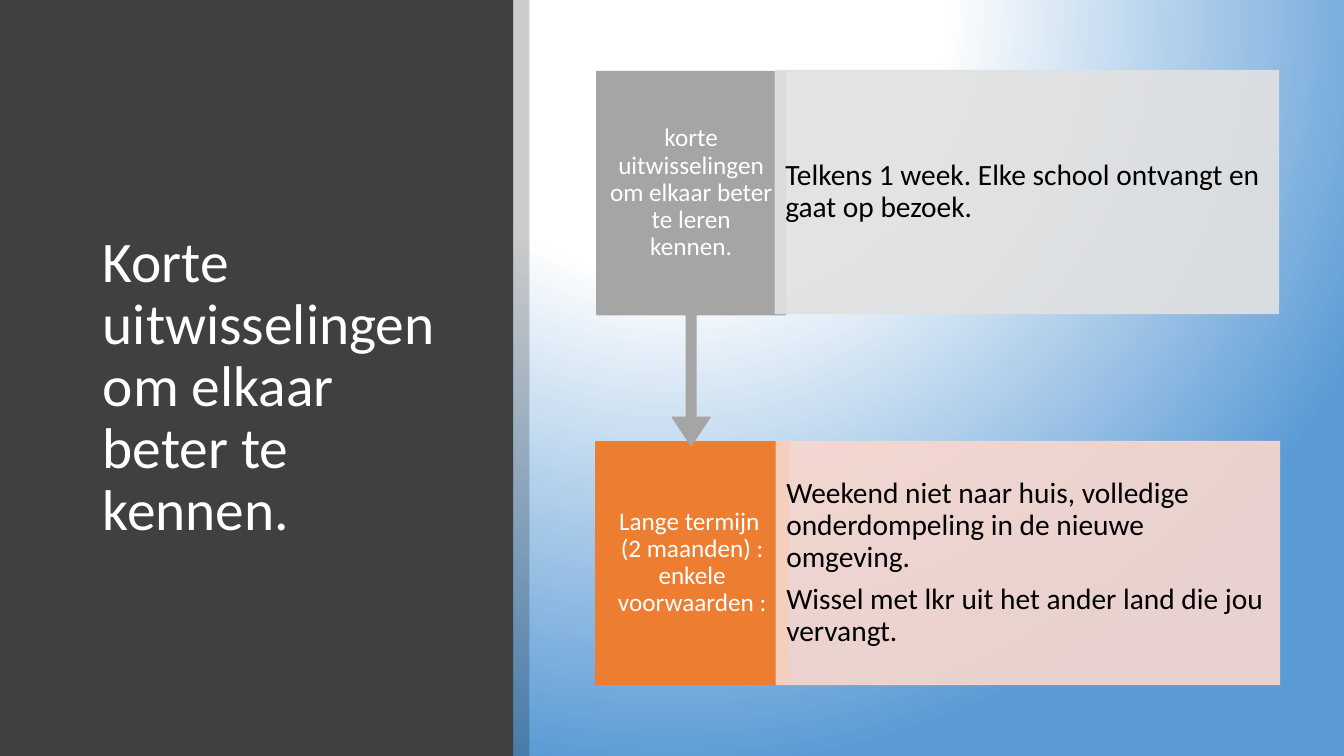
"""Build the slide about short exchanges with two linked explanation rows."""
from lxml.etree import SubElement
from pptx import Presentation
from pptx.dml.color import RGBColor
from pptx.enum.shapes import MSO_SHAPE
from pptx.enum.text import MSO_ANCHOR, MSO_AUTO_SIZE, PP_ALIGN
from pptx.oxml import parse_xml
from pptx.oxml.ns import nsdecls, qn
from pptx.util import Inches, Pt

WHITE = RGBColor(0xFF, 0xFF, 0xFF)
BLACK = RGBColor(0, 0, 0)
BLUE = RGBColor(0x5B, 0x9B, 0xD5)
DARK = RGBColor(0x40, 0x40, 0x40)
ORANGE = RGBColor(0xED, 0x7D, 0x31)
PINK = RGBColor(0xF8, 0xD7, 0xCE)
GREY = RGBColor(0xA5, 0xA5, 0xA5)
LIGHT = RGBColor(0xE1, 0xE1, 0xE1)


def add_box(shapes, kind, box, color, alpha=100, outline=True):
    sp = shapes.add_shape(kind, *[Inches(v) for v in box])
    sp.shadow.inherit = False
    fills = [sp.fill]
    if outline:
        sp.line.width = Pt(1)
        fills.append(sp.line.fill)
    else:
        sp.line.fill.background()
    for fill in fills:
        fill.solid()
        fill.fore_color.rgb = color
    if alpha < 100:
        for clr in list(sp.element.spPr.iter(qn("a:srgbClr"))):
            SubElement(clr, qn("a:alpha"), val=str(alpha * 1000))
    return sp


def set_text(sp, paragraphs, size, color, align, insets, after):
    tf = sp.text_frame
    frame = {"word_wrap": True, "auto_size": MSO_AUTO_SIZE.NONE,
             "vertical_anchor": MSO_ANCHOR.MIDDLE,
             "margin_left": Inches(insets[0]), "margin_right": Inches(insets[0]),
             "margin_top": Inches(insets[1]), "margin_bottom": Inches(insets[1])}
    for name, value in frame.items():
        setattr(tf, name, value)
    for i, text in enumerate(paragraphs):
        p = tf.add_paragraph() if i else tf.paragraphs[0]
        p.text = text
        p.alignment, p.line_spacing, p.space_after = align, 0.9, Pt(after)
        for r in p.runs:
            for name, value in {"name": "Calibri", "size": Pt(size)}.items():
                setattr(r.font, name, value)
            r.font.color.rgb = color


prs = Presentation()
prs.slide_width, prs.slide_height = Inches(13.33), Inches(7.5)
s = prs.slides.add_slide(prs.slide_layouts[5])

s.background.fill.gradient()
grad = next(s.element.iter(qn("a:gradFill")))
stops = "".join(f'<a:gs pos="{pos * 1000}"><a:srgbClr val="{color}"/></a:gs>'
                for pos, color in [(0, WHITE), (35, WHITE), (100, BLUE)])
grad.getparent().replace(grad, parse_xml(
    f'<a:gradFill {nsdecls("a")} rotWithShape="1"><a:gsLst>{stops}</a:gsLst>'
    '<a:path path="circle"><a:fillToRect l="50000" t="-80000" r="50000" b="180000"/>'
    '</a:path></a:gradFill>'))

panel = add_box(s.shapes, MSO_SHAPE.RECTANGLE, (0, 0, 5.09, 7.5), DARK, outline=False)
title = s.shapes.title
panel.element.addnext(title.element)
for name, value in {"left": 0.92, "top": 0.89, "width": 3.65, "height": 5.91}.items():
    setattr(title, name, Inches(value))
set_text(title, ["Korte uitwisselingen om elkaar beter te kennen."], 41, WHITE,
         PP_ALIGN.LEFT, (0.1, 0.05), 0)
add_box(s.shapes, MSO_SHAPE.RECTANGLE, (5.09, 0, 0.16, 7.5), BLACK, 20, False)

rows = [
    (MSO_SHAPE.RECTANGLE, (5.91, 4.38, 1.91, 2.41), ORANGE,
     "Lange termijn \v(2 maanden) : enkele voorwaarden :",
     (7.7, 4.38, 4.99, 2.41), PINK,
     ["Weekend niet naar huis, volledige onderdompeling in de nieuwe omgeving.",
      "Wissel met lkr uit het ander land die jou vervangt."]),
    (MSO_SHAPE.DOWN_ARROW_CALLOUT, (5.92, 0.71, 1.87, 3.71), GREY,
     "korte uitwisselingen om elkaar beter te leren kennen.",
     (7.69, 0.7, 4.99, 2.41), LIGHT,
     ["Telkens 1 week. Elke school ontvangt en gaat op bezoek."]),
]
group = s.shapes.add_group_shape()
for kind, label_box, label_color, label, detail_box, detail_color, details in rows:
    sp = add_box(group.shapes, kind, label_box, label_color)
    if kind == MSO_SHAPE.DOWN_ARROW_CALLOUT:
        for i, value in enumerate([0.05, 0.1, 0.15, 0.65]):
            sp.adjustments[i] = value
    set_text(sp, [label], 18, WHITE, PP_ALIGN.CENTER, (0.12, 0.14), 6.5)
    sp = add_box(group.shapes, MSO_SHAPE.RECTANGLE, detail_box, detail_color, 90)
    set_text(sp, details, 21, BLACK, PP_ALIGN.LEFT, (0.1, 0.29), 7.5)

prs.save("out.pptx")
